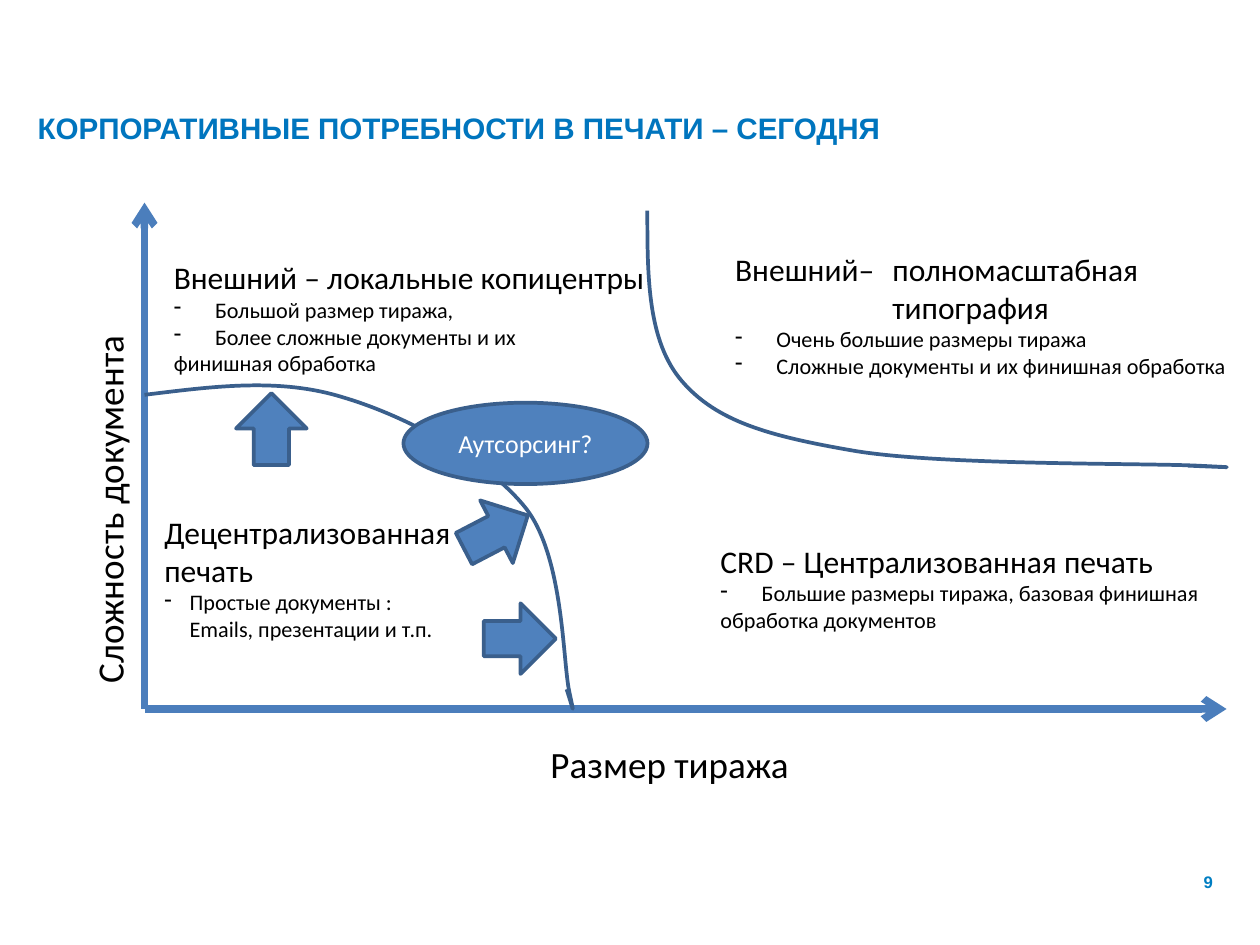
from lxml import etree
from pptx import Presentation
from pptx.dml.color import RGBColor
from pptx.enum.shapes import MSO_CONNECTOR, MSO_SHAPE
from pptx.enum.text import MSO_ANCHOR, MSO_AUTO_SIZE, PP_ALIGN
from pptx.oxml.ns import qn
from pptx.util import Inches, Pt

STRAIGHT = MSO_CONNECTOR.STRAIGHT
UP_ARROW, OVAL = MSO_SHAPE.UP_ARROW, MSO_SHAPE.OVAL
TOP, MIDDLE = MSO_ANCHOR.TOP, MSO_ANCHOR.MIDDLE
LEFT, CENTER, RIGHT = PP_ALIGN.LEFT, PP_ALIGN.CENTER, PP_ALIGN.RIGHT
GROW, FIXED = MSO_AUTO_SIZE.SHAPE_TO_FIT_TEXT, MSO_AUTO_SIZE.NONE

WIDTH, HEIGHT = Inches(9.45), Inches(7.09)
COLS, ROWS = 100, 75
COLORS = {"title": "0075BE", "number": "007EC2", "axis": "4B7EBC", "fill": "4F81BD",
          "outline": "3A5F8C", "text": "000000", "white": "FFFFFF"}

HEAD = {"size": 17}
ITEM = {"size": 12}
DASH = {"size": 12, "bullet": "-", "indent": 0.31}
NEAR_DASH = {**DASH, "indent": 0.19}
HANGING = {"size": 12, "indent": 0.19}
TABBED = {"size": 17, "tab": 1.18}
AXIS_LABEL = {"size": 20}

ORIGIN = (11.47, 56.27)
AXIS_ENDS = [(11.47, 16.08), (97.35, 56.27)]

ZONES = [
    ((12, 40.21, 25.61, 11.43),
     [("Децентрализованная", HEAD), ("печать", HEAD),
      ("Простые документы :", NEAR_DASH), ("Emails, презентации и т.п.", HANGING)]),
    ((56.13, 42.49, 40.95, 8.36),
     [("CRD – Централизованная печать", HEAD),
      ("Большие размеры тиража, базовая финишная", DASH),
      ("обработка документов", ITEM)]),
    ((12.75, 20, 39.89, 10.48),
     [("Внешний – локальные копицентры", HEAD), ("Большой размер тиража,", DASH),
      ("Более сложные документы и их", DASH), ("финишная обработка", ITEM)]),
    ((57.3, 19.32, 41.59, 11.43),
     [("Внешний– \tполномасштабная", TABBED), ("\tтипография", TABBED),
      ("Очень большие размеры тиража", DASH),
      ("Сложные документы и их финишная обработка", DASH)]),
]

INNER_CURVE = [
    (11.47, 31.34), (16.83, 30.69), (22.12, 29.95), (27.2, 31.53), (32.28, 33.02),
    (38.73, 36.51), (41.8, 40.42), (44.76, 44.34), (44.66, 52.59), (45.19, 54.92),
    (45.71, 57.35), (45.4, 55.98), (44.97, 54.71)]
OUTER_CURVE = [
    (51.38, 16.72), (51.38, 21.9), (51.38, 27.09), (54.13, 30.26), (56.88, 33.44),
    (60.95, 34.6), (67.72, 35.77), (74.5, 36.93), (90.58, 36.75), (95.03, 36.96),
    (99.37, 37.17), (96.83, 37.07), (94.29, 36.96)]

ARROW_SIZE = (5.61, 5.71)
ARROWS = [((18.73, 31.2), 0), ((38.45, 47.83), 90), ((36.55, 39.37), 62.5)]


def rgb(name):
    return RGBColor.from_string(COLORS[name])


def grid(*values):
    return [round(v * (HEIGHT / ROWS if i % 2 else WIDTH / COLS)) for i, v in enumerate(values)]


def set_line(s, color, width):
    s.line.color.rgb = rgb(color)
    s.line.width = Pt(width)


def set_indent(p, bullet=None, indent=0, tab=None):
    pPr = p._p.get_or_add_pPr()
    if indent:
        pPr.set("marL", str(Inches(indent)))
        pPr.set("indent", str(-Inches(indent) if bullet else 0))
    if bullet:
        etree.SubElement(pPr, qn("a:buFontTx"))
        etree.SubElement(pPr, qn("a:buChar")).set("char", bullet)
    if tab:
        tabs = etree.SubElement(pPr, qn("a:tabLst"))
        etree.SubElement(tabs, qn("a:tab"), pos=str(Inches(tab)), algn="l")


def write(tf, lines, color="text", font="Calibri", bold=False, align=LEFT,
          anchor=TOP, wrap=False, auto=GROW, spacing=None):
    frame = {"word_wrap": wrap, "auto_size": auto, "vertical_anchor": anchor,
             "margin_left": Inches(0.1), "margin_right": Inches(0.1),
             "margin_top": Inches(0.05), "margin_bottom": Inches(0.05)}
    for name, value in frame.items():
        setattr(tf, name, value)
    for i, (text, look) in enumerate(lines):
        p = tf.add_paragraph() if i else tf.paragraphs[0]
        set_indent(p, **{k: v for k, v in look.items() if k != "size"})
        p.alignment = align
        p.line_spacing = spacing
        r = p.add_run()
        r.text = text
        for name, value in {"name": font, "size": Pt(look["size"]), "bold": bold}.items():
            setattr(r.font, name, value)
        r.font.color.rgb = rgb(color)


def add_text(slide, box, lines, rotation=0, **style):
    s = slide.shapes.add_textbox(*grid(*box))
    s.rotation = rotation
    write(s.text_frame, lines, **style)


def add_axis(slide, end):
    s = slide.shapes.add_connector(STRAIGHT, *grid(*ORIGIN), *grid(*end))
    set_line(s, "axis", 4)
    etree.SubElement(s.line._get_or_add_ln(), qn("a:tailEnd"), type="arrow")
    etree.SubElement(s._element.spPr, qn("a:effectLst"))


def bezier(points, steps=24):
    for k in range(0, len(points) - 1, 3):
        a, b, c, d = points[k:k + 4]
        for n in range(1, steps + 1):
            t = n / steps
            u = 1 - t
            yield grid(*(u**3 * a[i] + 3 * u * u * t * b[i] + 3 * u * t * t * c[i] + t**3 * d[i]
                         for i in (0, 1)))


def add_curve(slide, points):
    builder = slide.shapes.build_freeform(*grid(*points[0]))
    builder.add_line_segments(bezier(points), close=False)
    s = builder.convert_to_shape()
    outline = s._element.find(".//" + qn("a:path"))
    for segment in outline.findall(qn("a:lnTo")):
        outline.remove(segment)
    for k in range(1, len(points), 3):
        curve = etree.SubElement(outline, qn("a:cubicBezTo"))
        for point in points[k:k + 3]:
            x, y = grid(*point)
            etree.SubElement(curve, qn("a:pt"), x=str(x - s.left), y=str(y - s.top))
    s.shadow.inherit = False
    s.fill.background()
    set_line(s, "outline", 2)


def add_solid(slide, kind, box, rotation=0):
    s = slide.shapes.add_shape(kind, *grid(*box))
    s.rotation = rotation
    s.shadow.inherit = False
    s.fill.solid()
    s.fill.fore_color.rgb = rgb("fill")
    set_line(s, "outline", 2)
    return s


def main():
    prs = Presentation()
    prs.slide_width, prs.slide_height = WIDTH, HEIGHT
    slide = prs.slides.add_slide(prs.slide_layouts[6])

    heading = {"font": "Arial", "bold": True, "anchor": MIDDLE, "wrap": True, "auto": FIXED}
    add_text(slide, (92.4, 68.7, 4.9, 2.6), [("9", {"size": 9})],
             color="number", align=RIGHT, **heading)
    add_text(slide, (1.95, 5.4, 78.7, 10.05),
             [("КОРПОРАТИВНЫЕ ПОТРЕБНОСТИ В ПЕЧАТИ – СЕГОДНЯ", {"size": 16})],
             color="title", spacing=0.8, **heading)

    for end in AXIS_ENDS:
        add_axis(slide, end)
    add_text(slide, (-6.3, 37.99, 29.95, 4.66), [("Сложность документа", AXIS_LABEL)], rotation=270)
    add_text(slide, (42.65, 58.36, 21.27, 4.66), [("Размер тиража", AXIS_LABEL)])
    for box, lines in ZONES:
        add_text(slide, box, lines)

    add_curve(slide, INNER_CURVE)
    for corner, rotation in ARROWS:
        add_solid(slide, UP_ARROW, corner + ARROW_SIZE, rotation)
    add_curve(slide, OUTER_CURVE)
    s = add_solid(slide, OVAL, (32.02, 31.96, 19.37, 6.46))
    write(s.text_frame, [("Аутсорсинг?", {"size": 14})], color="white",
          align=CENTER, anchor=MIDDLE, wrap=True, auto=FIXED)

    prs.save("out.pptx")


if __name__ == "__main__":
    main()
